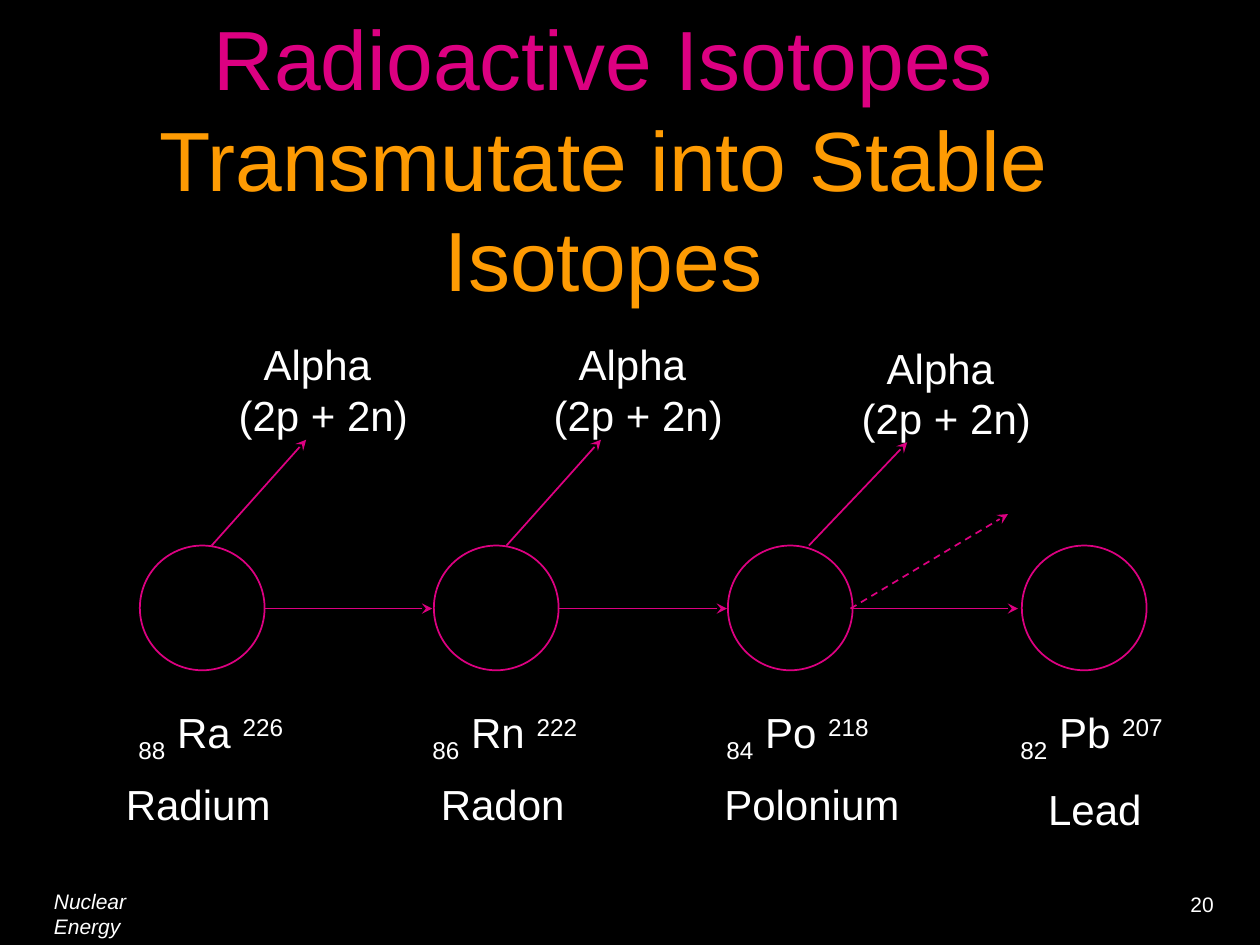
"""Build the radioactive decay chain slide."""
from lxml import etree
from pptx import Presentation
from pptx.dml.color import RGBColor
from pptx.enum import dml, shapes, text
from pptx.oxml import ns
from pptx.util import Inches, Pt

COLORS = {"back": "000000", "pink": "DC0081", "orange": "FE9B03", "white": "FFFFFF"}
LEFT, CENTER = text.PP_ALIGN.LEFT, text.PP_ALIGN.CENTER

prs = Presentation()
prs.slide_width, prs.slide_height = Inches(10), Inches(7.5)
s = prs.slides.add_slide(prs.slide_layouts[6])
s.background.fill.solid()
s.background.fill.fore_color.rgb = RGBColor.from_string(COLORS["back"])


def add_text(box, paragraphs, size=24, align=LEFT, wrap=False, italic=False):
    tf = s.shapes.add_textbox(*map(Inches, box)).text_frame
    tf.word_wrap = wrap
    for i, runs in enumerate(paragraphs):
        p = tf.paragraphs[0] if i == 0 else tf.add_paragraph()
        p.alignment = align
        for words, color, baseline in runs:
            r = p.add_run()
            r.text = words
            font = {"name": "Arial", "size": Pt(size), "italic": italic}
            for key, value in font.items():
                setattr(r.font, key, value)
            r.font.color.rgb = RGBColor.from_string(COLORS[color])
            if baseline:
                r._r.get_or_add_rPr().set("baseline", str(baseline * 1000))
    return tf


def add_arrow(x1, y1, x2, y2, dashed=False):
    c = s.shapes.add_connector(shapes.MSO_CONNECTOR.STRAIGHT, *map(Inches, (x1, y1, x2, y2)))
    c.line.color.rgb = RGBColor.from_string(COLORS["pink"])
    c.line.width = Pt(1)
    if dashed:
        c.line.dash_style = dml.MSO_LINE.DASH
    etree.SubElement(c.line._get_or_add_ln(), ns.qn("a:tailEnd"), type="stealth")
    etree.SubElement(c._element.spPr, ns.qn("a:effectLst"))


add_text((9.35, 7.03, 0.4, 0.3), [[("20", "white", 0)]], size=12)
add_text((0.33, 7, 1.2, 0.5), [[("Nuclear Energy", "white", 0)]], size=12, wrap=True, italic=True)
title = [("Radioactive Isotopes", "pink", 0), (" Transmutate into Stable Isotopes", "orange", 0)]
tf = add_text((0.5, 0.25, 8.58, 2), [title], size=48, align=CENTER, wrap=True)
tf.vertical_anchor = text.MSO_ANCHOR.MIDDLE

isotopes = [
    ("88", "Ra", "226", "Radium", (0.9, 6.13, 1.35, 0.5)),
    ("86", "Rn", "222", "Radon", (3.4, 6.13, 1.19, 0.5)),
    ("84", "Po", "218", "Polonium", (5.65, 6.13, 1.59, 0.5)),
    ("82", "Pb", "207", "Lead", (8.22, 6.17, 0.94, 0.5)),
]
for i, (number, symbol, mass, name, name_box) in enumerate(isotopes):
    x = 1.11 + i * 7 / 3
    sp = s.shapes.add_shape(shapes.MSO_SHAPE.OVAL, *map(Inches, (x, 4.33, 0.99, 0.99)))
    sp.shadow.inherit = False
    sp.fill.background()
    sp.line.color.rgb = RGBColor.from_string(COLORS["pink"])
    sp.line.width = Pt(1)
    runs = [(number, "white", -25), (f" {symbol} ", "white", 0), (mass, "white", 30)]
    add_text((x - 0.11, 5.56, 1.62, 0.5), [runs], wrap=True)
    add_text(name_box, [[(name, "white", 0)]])

alphas = [
    ((1.79, 2.64, 1.55, 0.9), (1.68, 4.33, 2.43, 3.49)),
    ((4.29, 2.64, 1.55, 0.9), (4.02, 4.33, 4.77, 3.49)),
    ((6.7, 2.67, 1.62, 0.9), (6.42, 4.33, 7.2, 3.51)),
]
for box, ray in alphas:
    add_arrow(*ray)
    add_text(box, [[("Alpha ", "white", 0)], [("(2p + 2n)", "white", 0)]], align=CENTER)

for start, end in [(2.1, 3.43), (4.43, 5.77), (6.75, 8.08)]:
    add_arrow(start, 4.83, end, 4.83)
add_arrow(6.75, 4.83, 8, 4.08, dashed=True)

prs.save("out.pptx")
